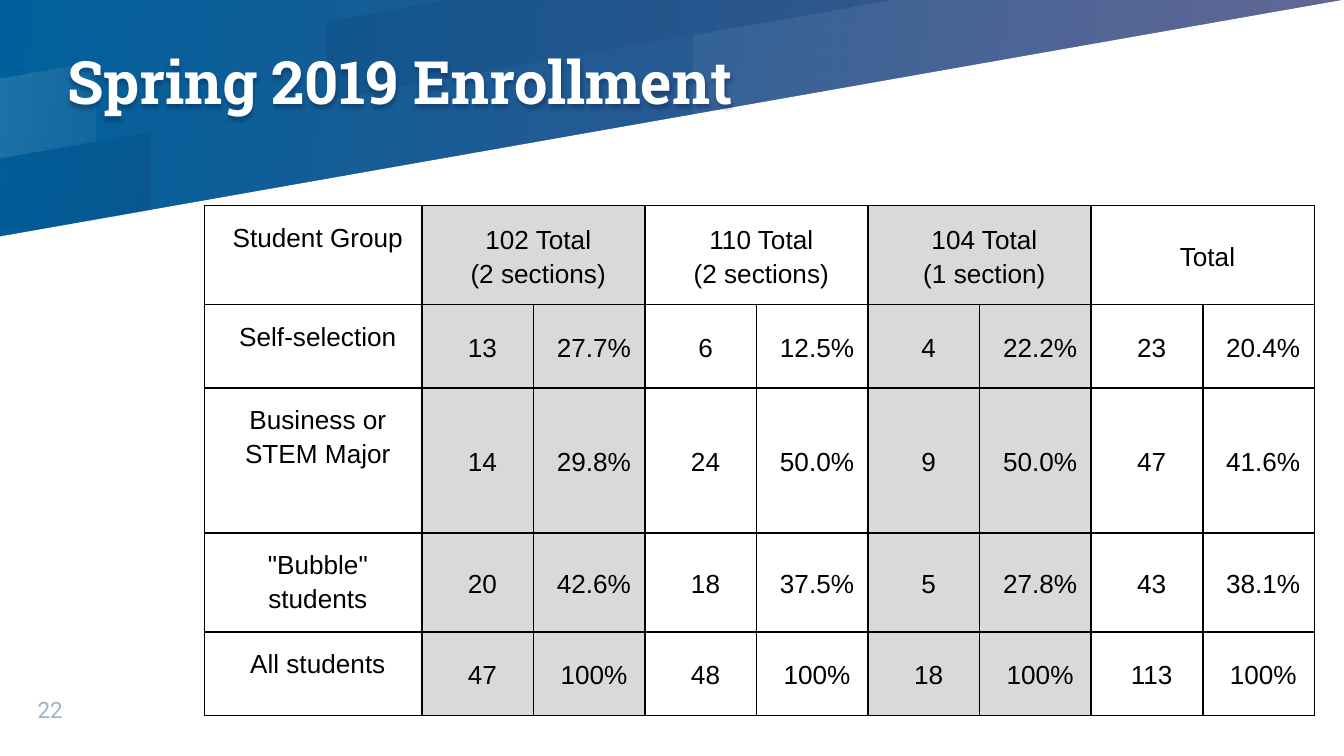
from dataclasses import dataclass

from lxml.etree import SubElement
from pptx import Presentation
from pptx.dml.color import RGBColor
from pptx.enum.text import MSO_ANCHOR, PP_ALIGN
from pptx.oxml import parse_xml
from pptx.oxml.ns import nsdecls, qn
from pptx.util import Inches, Pt


@dataclass(frozen=True)
class Theme:
    sky: str = "00609C"
    dusk: str = "555386"
    paper: str = "FFFFFF"
    shade: str = "00001A"
    ink: str = "000000"
    column: str = "D9D9D9"
    folio: str = "9EB3C2"
    title_font: str = "Roboto Slab"
    folio_font: str = "Roboto"
    table_font: str = "Arial"
    title_size: int = 32
    table_size: int = 14
    folio_size: int = 12


THEME = Theme()
WIDTH = 10
HEIGHT = WIDTH * 9 / 16
HORIZON, DROP, TIERS = 9.99, 1.76, 3
LABEL_WIDTH, FIGURE_WIDTH = 1.62, 0.83
ROW_HEIGHTS = [0.62, 0.62, 1.08, 0.62, 0.62]

SECTIONS = ["102 Total\n(2 sections)", "110 Total\n(2 sections)",
            "104 Total\n(1 section)", "Total"]
ENROLLMENT = [
    ("Self-selection", "13", "27.7%", "6", "12.5%", "4", "22.2%", "23", "20.4%"),
    ("Business or STEM Major", "14", "29.8%", "24", "50.0%", "9", "50.0%", "47", "41.6%"),
    ('"Bubble" students', "20", "42.6%", "18", "37.5%", "5", "27.8%", "43", "38.1%"),
    ("All students", "47", "100%", "48", "100%", "18", "100%", "113", "100%"),
]


def style_font(font, name, size, color, bold=False):
    font.name, font.size, font.bold = name, Pt(size), bold
    font.color.rgb = RGBColor.from_string(color)


def set_gradient(fill, colors):
    fill.gradient()
    fill.gradient_angle = 350
    for position, (stop, color) in enumerate(zip(fill.gradient_stops, colors)):
        stop.color.rgb = RGBColor.from_string(color)
        stop.position = position


def add_polygon(slide, points):
    corners = [(Inches(x), Inches(y)) for x, y in points]
    builder = slide.shapes.build_freeform(*corners[0])
    builder.add_line_segments(corners[1:])
    polygon = builder.convert_to_shape()
    polygon.shadow.inherit = False
    polygon.line.fill.background()
    return polygon


def add_band(slide, tier, left, right, color, opacities):
    def edge(level, x):
        return x, DROP * (level / TIERS - x / HORIZON)

    upper_end, lower_end = (min(right, HORIZON * level / TIERS)
                            for level in (tier - 1, tier))
    band = add_polygon(slide, [edge(tier - 1, left), edge(tier, left),
                               edge(tier, lower_end), edge(tier - 1, upper_end)])
    set_gradient(band.fill, [color, color])
    for tint, opacity in zip(band._element.iter(qn("a:srgbClr")), opacities):
        SubElement(tint, qn("a:alpha"), val=str(opacity * 1000))


def add_backdrop(slide):
    set_gradient(slide.background.fill, [THEME.sky, THEME.dusk])
    page = add_polygon(slide, [(0, HEIGHT), (WIDTH, HEIGHT), (WIDTH, 0),
                               (HORIZON, 0), (0, DROP)])
    page.fill.solid()
    page.fill.fore_color.rgb = RGBColor.from_string(THEME.paper)
    add_band(slide, 3, 0, 1.12, THEME.shade, (2, 8))
    add_band(slide, 3, 5.16, WIDTH, THEME.paper, (5, 12))
    add_band(slide, 2, 0, 0.71, THEME.paper, (12, 5))
    add_band(slide, 2, 2.44, WIDTH, THEME.shade, (8, 2))


def add_text(slide, words, box, anchor, **look):
    textbox = slide.shapes.add_textbox(*map(Inches, box))
    frame = textbox.text_frame
    frame.word_wrap = True
    frame.vertical_anchor = anchor
    frame.margin_left = frame.margin_right = frame.margin_top = frame.margin_bottom = 0
    frame.text = words
    style_font(frame.paragraphs[0].font, **look)
    return textbox


def add_soft_shadow(textbox):
    textbox._element.spPr.append(parse_xml(
        f'<a:effectLst {nsdecls("a")}>'
        '<a:outerShdw blurRad="28575" dist="19050" dir="5400000" algn="t" rotWithShape="0">'
        f'<a:srgbClr val="{THEME.shade}"><a:alpha val="25000"/></a:srgbClr>'
        '</a:outerShdw></a:effectLst>'))


def add_borders(cell):
    properties = cell._tc.get_or_add_tcPr()
    for place, side in enumerate(("lnL", "lnR", "lnT", "lnB")):
        properties.insert(place, parse_xml(
            f'<a:{side} {nsdecls("a")} w="{Pt(1)}"><a:solidFill>'
            f'<a:srgbClr val="{THEME.ink}"/></a:solidFill></a:{side}>'))


def fill_cell(cell, words, is_label, is_shaded):
    cell.text = words
    cell.margin_left = cell.margin_right = Inches(0.07)
    cell.margin_top = cell.margin_bottom = Inches(0.1)
    cell.vertical_anchor = MSO_ANCHOR.TOP if is_label else MSO_ANCHOR.MIDDLE
    if is_shaded:
        cell.fill.solid()
        cell.fill.fore_color.rgb = RGBColor.from_string(THEME.column)
    else:
        cell.fill.background()
    add_borders(cell)
    for paragraph in cell.text_frame.paragraphs:
        paragraph.alignment = PP_ALIGN.CENTER
        paragraph.line_spacing = 1.15
        paragraph._p.get_or_add_pPr().set("marL", str(Inches(0.07)))
        style_font(paragraph.font, THEME.table_font, THEME.table_size, THEME.ink)
        SubElement(paragraph._p, qn("a:endParaRPr"), sz=str(THEME.table_size * 100))


def add_enrollment_table(slide, left, top):
    header = ["Student Group"]
    for section in SECTIONS:
        header += [section, ""]
    rows = [header, *ENROLLMENT]
    widths = [LABEL_WIDTH] + [FIGURE_WIDTH] * (len(header) - 1)
    table = slide.shapes.add_table(
        len(rows), len(header), Inches(left), Inches(top),
        Inches(sum(widths)), Inches(sum(ROW_HEIGHTS))).table
    table.first_row = table.horz_banding = False
    for column, width in zip(table.columns, widths):
        column.width = Inches(width)
    for row, height in zip(table.rows, ROW_HEIGHTS):
        row.height = Inches(height)
    for row, entries in enumerate(rows):
        for column, words in enumerate(entries):
            fill_cell(table.cell(row, column), words,
                      column == 0, column % 4 in (1, 2))
    for column in range(1, len(header), 2):
        table.cell(0, column).merge(table.cell(0, column + 1))


def main():
    deck = Presentation()
    deck.slide_width, deck.slide_height = Inches(WIDTH), Inches(HEIGHT)
    slide = deck.slides.add_slide(deck.slide_layouts[6])
    add_backdrop(slide)
    add_text(slide, "22", (0.28, 5.11, 0.53, 0.27), MSO_ANCHOR.BOTTOM,
             name=THEME.folio_font, size=THEME.folio_size, color=THEME.folio)
    add_enrollment_table(slide, 1.52, 1.53)
    title = add_text(slide, "Spring 2019 Enrollment", (0.5, 0, 6, 1.2), MSO_ANCHOR.MIDDLE,
                     name=THEME.title_font, size=THEME.title_size,
                     color=THEME.paper, bold=True)
    add_soft_shadow(title)
    deck.save("out.pptx")


if __name__ == "__main__":
    main()
